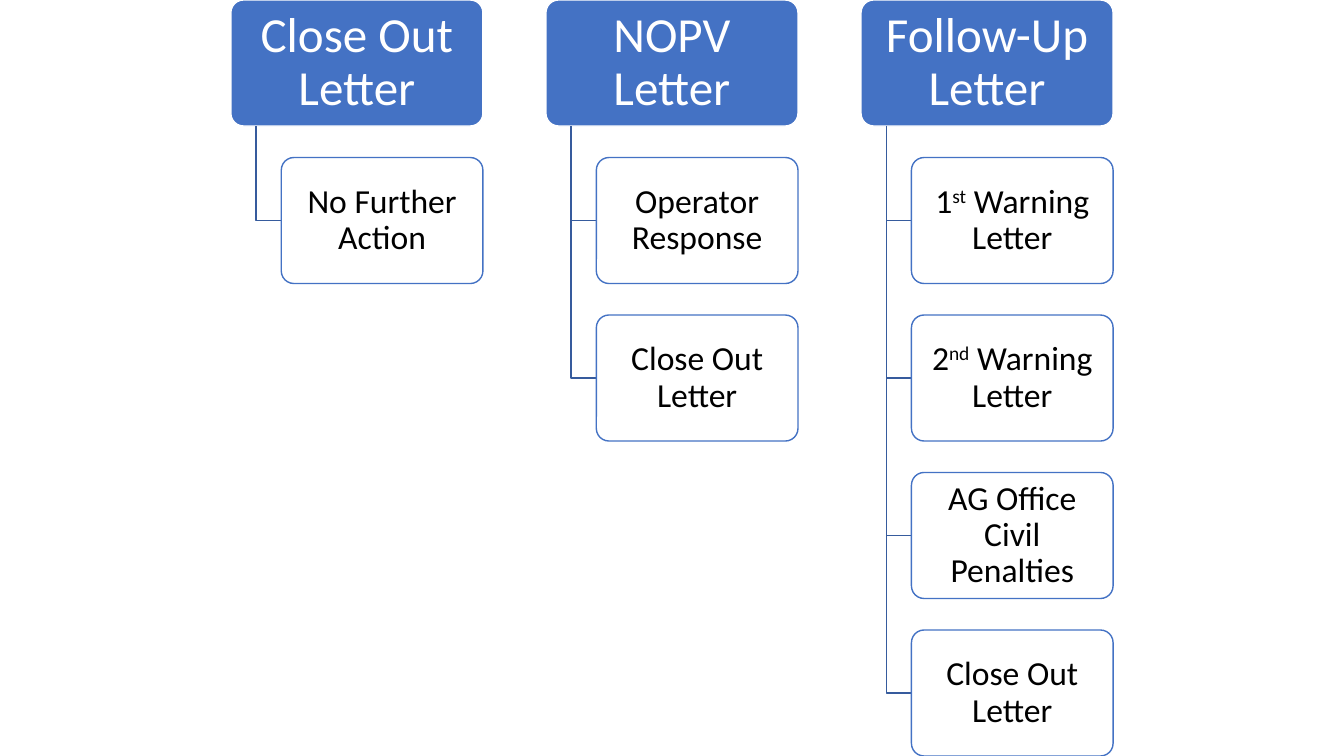
from dataclasses import dataclass

from lxml import etree
from pptx import Presentation
from pptx import util as u
from pptx.dml.color import RGBColor
from pptx.enum import shapes, text
from pptx.oxml import ns

BLUE = RGBColor(0x44, 0x72, 0xC4)
DARK_BLUE = RGBColor(0x36, 0x5B, 0x9D)
WHITE = RGBColor(0xFF, 0xFF, 0xFF)
BLACK = RGBColor(0x00, 0x00, 0x00)
FONT = "Calibri"

# Layout in inches: every gap is a quarter of the box it follows
LEFT = 2.29
HEAD_WIDTH, STEP_WIDTH, HEIGHT = 2.5, 2.0, 1.25
COLUMN_PITCH = HEAD_WIDTH * 1.25
ROW_PITCH = HEIGHT * 1.25
TRUNK_INDENT = HEAD_WIDTH / 10
STEP_INDENT = HEAD_WIDTH / 5


@dataclass(frozen=True)
class Branch:
    heading: str
    steps: tuple[str, ...]


# Text between carets is superscript
BRANCHES = (
    Branch("Close Out Letter", ("No Further Action",)),
    Branch("NOPV Letter", ("Operator Response", "Close Out Letter")),
    Branch("Follow-Up Letter", (
        "1^st^ Warning Letter",
        "2^nd^ Warning Letter",
        "AG Office Civil Penalties",
        "Close Out Letter",
    )),
)


def write_text(box, wording: str, *, size: float, color: RGBColor,
               side: float, edge: float) -> None:
    """Fill a box with centred text; side and edge are its margins."""
    frame = box.text_frame
    frame.word_wrap = True
    frame.vertical_anchor = text.MSO_ANCHOR.MIDDLE
    frame.margin_left = frame.margin_right = u.Inches(side)
    frame.margin_top = frame.margin_bottom = u.Inches(edge)
    para = frame.paragraphs[0]
    para.alignment = text.PP_ALIGN.CENTER
    para.line_spacing = 0.9
    for index, piece in enumerate(wording.split("^")):
        span = para.add_run()
        span.text = piece
        span.font.name = FONT
        span.font.size = u.Pt(size)
        span.font.color.rgb = color
        if index % 2:
            span._r.get_or_add_rPr().set("baseline", "30000")


def add_box(page, left: float, top: float, width: float, *,
            fill: RGBColor, line: RGBColor):
    box = page.shapes.add_shape(
        shapes.MSO_SHAPE.ROUNDED_RECTANGLE,
        u.Inches(left), u.Inches(top), u.Inches(width), u.Inches(HEIGHT))
    box.adjustments[0] = 0.1
    box.shadow.inherit = False
    box.fill.solid()
    box.fill.fore_color.rgb = fill
    box.line.color.rgb = line
    box.line.width = u.Pt(1)
    return box


def set_opacity(box, percent: int) -> None:
    color = box._element.spPr.find(ns.qn("a:solidFill"))[0]
    etree.SubElement(color, ns.qn("a:alpha")).set("val", str(percent * 1000))


def add_elbow(page, left: float, bottom: float) -> None:
    """Draw a line down from the heading and across to a step."""
    x, y = u.Inches(left), u.Inches(bottom)
    builder = page.shapes.build_freeform(x, u.Inches(HEIGHT))
    end = u.Inches(left + STEP_INDENT - TRUNK_INDENT)
    builder.add_line_segments([(x, y), (end, y)], close=False)
    elbow = builder.convert_to_shape()
    elbow.shadow.inherit = False
    elbow.fill.background()
    elbow.line.color.rgb = DARK_BLUE
    elbow.line.width = u.Pt(1)


def add_branch(page, branch: Branch, left: float) -> None:
    # Heading
    head = add_box(page, left, 0, HEAD_WIDTH, fill=BLUE, line=WHITE)
    write_text(head, branch.heading, size=35, color=WHITE,
               side=0.11, edge=0.09)

    # Steps hanging from the heading
    for row, wording in enumerate(branch.steps, start=1):
        top = row * ROW_PITCH
        add_elbow(page, left + TRUNK_INDENT, top + HEIGHT / 2)
        step = add_box(page, left + STEP_INDENT, top, STEP_WIDTH,
                       fill=WHITE, line=BLUE)
        set_opacity(step, 90)
        write_text(step, wording, size=24, color=BLACK,
                   side=0.09, edge=0.07)


def main() -> None:
    deck = Presentation()
    deck.slide_width, deck.slide_height = u.Inches(13.33), u.Inches(7.5)
    page = deck.slides.add_slide(deck.slide_layouts.get_by_name("Blank"))
    for column, branch in enumerate(BRANCHES):
        add_branch(page, branch, LEFT + column * COLUMN_PITCH)
    deck.save("out.pptx")


if __name__ == "__main__":
    main()
